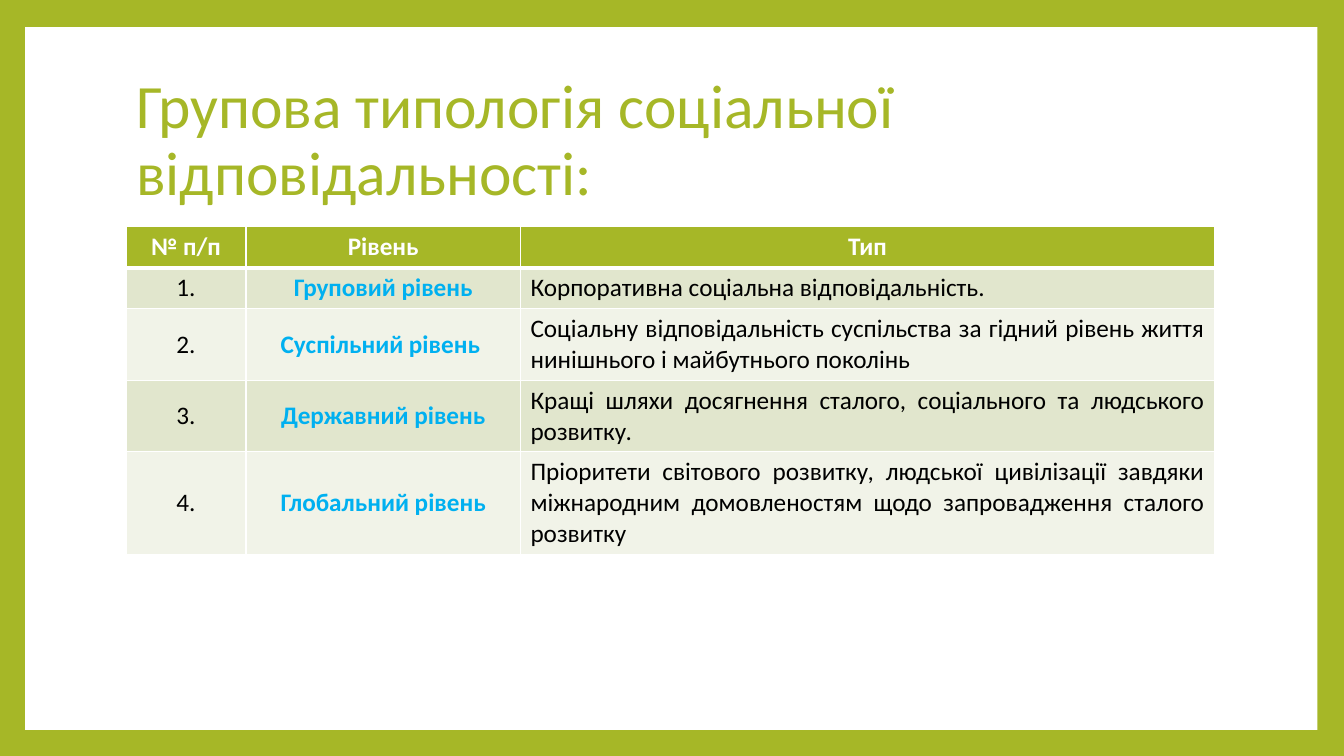
"""Build a slide with a table of levels of social responsibility."""
from lxml import etree
from pptx import Presentation
from pptx.dml.color import RGBColor
from pptx.enum import shapes, text
from pptx.oxml import ns
from pptx.util import Pt

TITLE = "Групова типологія соціальної відповідальності:"
ROWS = [
    ("№ п/п", "Рівень", "Тип"),
    ("1.", "Груповий рівень", "Корпоративна соціальна відповідальність."),
    ("2.", "Суспільний рівень ",
     "Соціальну відповідальність суспільства за гідний рівень життя "
     "нинішнього і майбутнього поколінь "),
    ("3.", "Державний рівень",
     "Кращі шляхи досягнення сталого, соціального та людського розвитку. "),
    ("4.", "Глобальний рівень",
     "Пріоритети світового розвитку, людської цивілізації завдяки "
     "міжнародним домовленостям щодо запровадження сталого розвитку "),
]
WIDTHS = [85.8, 196, 495.8]
HEIGHTS = [29.2, 29.2, 51.2, 51.2, 73.2]
GREEN, WHITE, BLACK, BLUE = "A6B727", "FFFFFF", "000000", "00B0F0"
BANDS = ["F1F3E8", "E1E6CD"]
FONT = "Calibri"
LEFT, WIDE = 90, 777.6


def paint(fill, color):
    fill.solid()
    fill.fore_color.rgb = RGBColor.from_string(color)


def style(para, size, color, bold=False):
    for run in para.runs:
        font = run.font
        font.name, font.size, font.bold = FONT, Pt(size), bold
        font.color.rgb = RGBColor.from_string(color)


def edge(cell, row):
    props = cell._tc.get_or_add_tcPr()
    thick = {"L": 1, "R": 1, "T": 3 if row == 1 else 1, "B": 3 if row == 0 else 1}
    for spot, (side, width) in enumerate(thick.items()):
        line = etree.Element(ns.qn(f"a:ln{side}"), w=str(Pt(width)))
        fill = etree.SubElement(line, ns.qn("a:solidFill"))
        etree.SubElement(fill, ns.qn("a:srgbClr"), val=WHITE)
        props.insert(spot, line)


def fill_cell(cell, words, row, col):
    head = row == 0
    cell.text_frame.text = words
    para = cell.text_frame.paragraphs[0]
    if head or col < 2:
        para.alignment = text.PP_ALIGN.CENTER
    elif row > 1:
        para.alignment = text.PP_ALIGN.JUSTIFY
    if row > 1 and col < 2:
        cell.vertical_anchor = text.MSO_ANCHOR.MIDDLE
    color = WHITE if head else BLUE if col == 1 else BLACK
    style(para, 18, color, head or col == 1)
    paint(cell.fill, GREEN if head else BANDS[row % 2])
    edge(cell, row)


def main():
    deck = Presentation()
    deck.slide_width, deck.slide_height = Pt(960), Pt(540)
    slide = deck.slides.add_slide(deck.slide_layouts[5])
    paint(slide.background.fill, GREEN)

    title = slide.shapes.title
    title.left, title.top, title.width, title.height = map(Pt, (LEFT, 48.2, WIDE, 106.6))
    frame = title.text_frame
    frame.text = TITLE
    frame.word_wrap = True
    frame.auto_size = text.MSO_AUTO_SIZE.NONE
    frame.vertical_anchor = text.MSO_ANCHOR.MIDDLE
    para = frame.paragraphs[0]
    para.alignment = text.PP_ALIGN.LEFT
    para.line_spacing = 0.9
    style(para, 44, GREEN)

    panel = slide.shapes.add_shape(
        shapes.MSO_SHAPE.RECTANGLE, *map(Pt, (18, 19.4, 923, 502)))
    panel.shadow.inherit = False
    paint(panel.fill, WHITE)
    panel.line.fill.background()
    title.element.addprevious(panel.element)

    table = slide.shapes.add_table(
        len(ROWS), len(WIDTHS), Pt(LEFT), Pt(162), Pt(WIDE), Pt(sum(HEIGHTS))).table
    for column, width in zip(table.columns, WIDTHS):
        column.width = Pt(width)
    for row, (words, height) in enumerate(zip(ROWS, HEIGHTS)):
        table.rows[row].height = Pt(height)
        for col, word in enumerate(words):
            fill_cell(table.cell(row, col), word, row, col)

    deck.save("out.pptx")


if __name__ == "__main__":
    main()
